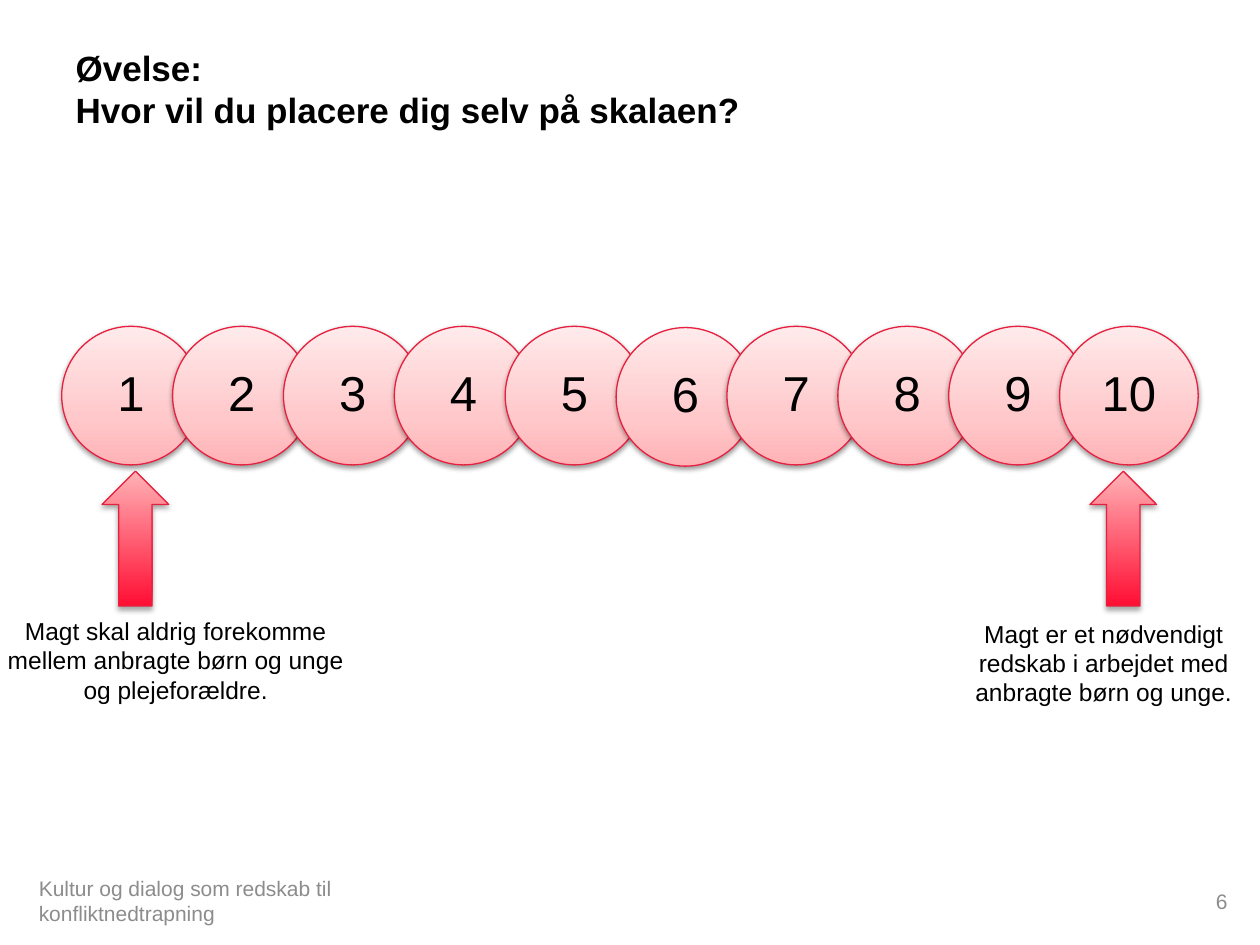
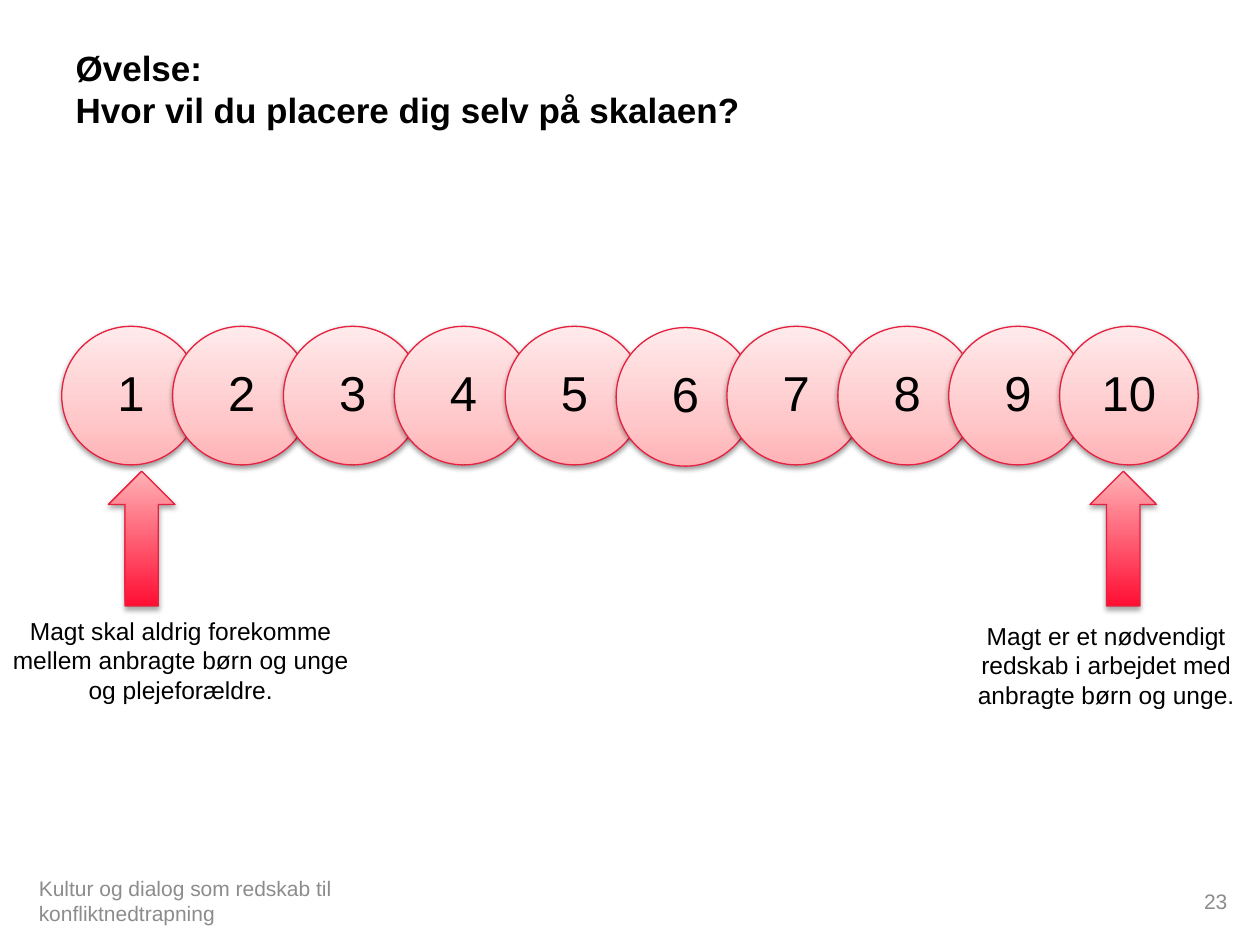
from dataclasses import dataclass

from lxml.etree import SubElement
from pptx import Presentation
from pptx.dml.color import RGBColor
from pptx.enum.shapes import MSO_SHAPE as Shape
from pptx.enum.text import MSO_ANCHOR as Anchor, PP_ALIGN as Align
from pptx.oxml.ns import qn
from pptx.util import Inches, Pt

COLUMNS, ROWS = 100, 75
SLIDE_WIDTH, SLIDE_HEIGHT = Inches(10), Inches(7.5)


@dataclass(frozen=True)
class Theme:
    font: str = "Arial"
    background: str = "FFFFFF"
    ink: str = "000000"
    muted: str = "8C8C8C"
    outline: str = "E7203F"
    outline_width: float = 0.75
    circle_stops: tuple = ((0, "FFB2B6"), (35, "FFC9CB"), (100, "FFEAEB"))
    arrow_stops: tuple = ((0, "FF0E33"), (100, "FFB2B6"))
    title_size: int = 20
    title_leading: int = 24
    number_size: int = 28
    caption_size: int = 14
    footer_size: int = 12


THEME = Theme()


@dataclass(frozen=True)
class Box:
    """A region in grid columns and rows."""
    left: float
    top: float
    width: float
    height: float

    def emu(self):
        col, row = SLIDE_WIDTH / COLUMNS, SLIDE_HEIGHT / ROWS
        return (round(self.left * col), round(self.top * row),
                round(self.width * col), round(self.height * row))


TITLE_BOX = Box(5, 3, 90, 12.5)
SCALE_BOX = Box(4.9, 25.9, 90.2, 11)
FOOTER_BOX = Box(2.1, 69.5, 96.3, 4)
ARROW_TOP, ARROW_WIDTH, ARROW_HEIGHT = 37.4, 5.3, 10.7
CAPTION_HEIGHT = 8.1
STEPS = 10
LOWERED_STEP, LOWERED_BY = 6, 0.1

TITLE = "Øvelse:\vHvor vil du placere dig selv på skalaen?"
FOOTER = "Kultur og dialog som redskab til konfliktnedtrapning"
NEVER = "Magt skal aldrig forekomme mellem anbragte børn og unge og plejeforældre."
NECESSARY = "Magt er et nødvendigt redskab i arbejdet med anbragte børn og unge."


def format_text(frame, text, size, color=THEME.ink, align=Align.LEFT, bold=False):
    frame.word_wrap = True
    frame.text = text
    paragraph = frame.paragraphs[0]
    paragraph.alignment = align
    font = paragraph.font
    font.name, font.size, font.bold = THEME.font, Pt(size), bold
    font.color.rgb = RGBColor.from_string(color)
    return paragraph


def add_text(slide, box, *args, anchor=Anchor.TOP, **kwargs):
    frame = slide.shapes.add_textbox(*box.emu()).text_frame
    frame.vertical_anchor = anchor
    format_text(frame, *args, **kwargs)


def add_glossy(shapes, kind, box, stops, shadow_alpha, shadow_distance):
    """Add an outlined shape with an upward gradient and a soft shadow below."""
    shape = shapes.add_shape(kind, *box.emu())
    shape.line.color.rgb = RGBColor.from_string(THEME.outline)
    shape.line.width = Pt(THEME.outline_width)
    shape.fill.gradient()
    shape.fill.gradient_angle = 90
    properties = shape._element.spPr
    stop_list = properties.find(".//" + qn("a:gsLst"))
    for stop in list(stop_list):
        stop_list.remove(stop)
    for position, color in stops:
        stop = SubElement(stop_list, qn("a:gs"), pos=str(position * 1000))
        SubElement(stop, qn("a:srgbClr"), val=color)

    shape.shadow.inherit = False
    shadow = SubElement(properties.find(qn("a:effectLst")), qn("a:outerShdw"),
                        blurRad=str(Pt(3.1)), dist=str(Pt(shadow_distance)),
                        dir="5400000", rotWithShape="0")
    shade = SubElement(shadow, qn("a:srgbClr"), val=THEME.ink)
    SubElement(shade, qn("a:alpha"), val=str(shadow_alpha * 1000))
    return shape


def add_title(slide, box):
    title = slide.shapes.title
    title.left, title.top, title.width, title.height = box.emu()
    frame = title.text_frame
    frame.vertical_anchor = Anchor.TOP
    frame.margin_top = Inches(0.07)
    heading = format_text(frame, TITLE, THEME.title_size, bold=True)
    heading.line_spacing = Pt(THEME.title_leading)


def add_footer(slide, box, number):
    width = box.width * 0.33
    right = box.left + box.width - width
    for left, text, align in ((box.left, FOOTER, Align.LEFT),
                              (right, str(number), Align.RIGHT)):
        add_text(slide, Box(left, box.top, width, box.height), text,
                 THEME.footer_size, THEME.muted, align, anchor=Anchor.MIDDLE)


def add_scale(slide, box):
    """Spread overlapping numbered circles evenly across the box."""
    circles = slide.shapes.add_group_shape().shapes
    diameter = box.height
    pitch = (box.width - diameter) / (STEPS - 1)
    for step in range(1, STEPS + 1):
        top = box.top + (LOWERED_BY if step == LOWERED_STEP else 0)
        place = Box(box.left + (step - 1) * pitch, top, diameter, diameter)
        circle = add_glossy(circles, Shape.OVAL, place, THEME.circle_stops, 38, 1.6)
        frame = circle.text_frame
        frame.margin_left = frame.margin_right = Inches(0.06)
        frame.margin_top = frame.margin_bottom = Inches(0.04)
        frame.vertical_anchor = Anchor.MIDDLE
        number = format_text(frame, str(step), THEME.number_size, align=Align.CENTER)
        number.line_spacing = 0.9


def add_endpoint(slide, arrow_left, caption_box, caption):
    """Explain one end of the scale with an arrow and a caption."""
    arrow_box = Box(arrow_left, ARROW_TOP, ARROW_WIDTH, ARROW_HEIGHT)
    add_glossy(slide.shapes, Shape.UP_ARROW, arrow_box, THEME.arrow_stops, 35, 1.8)
    add_text(slide, caption_box, caption, THEME.caption_size, align=Align.CENTER)


def add_exercise_slide(deck, number, low_arrow, low_caption, high_caption):
    """Build a scale slide; each caption is placed by its left and top."""
    slide = deck.slides.add_slide(deck.slide_layouts[5])
    background = slide.background.fill
    background.solid()
    background.fore_color.rgb = RGBColor.from_string(THEME.background)
    add_title(slide, TITLE_BOX)
    add_footer(slide, FOOTER_BOX, number)
    add_scale(slide, SCALE_BOX)
    add_endpoint(slide, low_arrow, Box(*low_caption, 28.7, CAPTION_HEIGHT), NEVER)
    add_endpoint(slide, 86.5, Box(*high_caption, 24.4, CAPTION_HEIGHT), NECESSARY)


def main():
    deck = Presentation()
    deck.slide_width, deck.slide_height = SLIDE_WIDTH, SLIDE_HEIGHT
    add_exercise_slide(deck, 6, 8.1, (-0.4, 48.4), (75.4, 48.6))
    add_exercise_slide(deck, 23, 8.6, (0, 48.4), (75.6, 48.8))
    deck.save("out.pptx")


if __name__ == "__main__":
    main()
